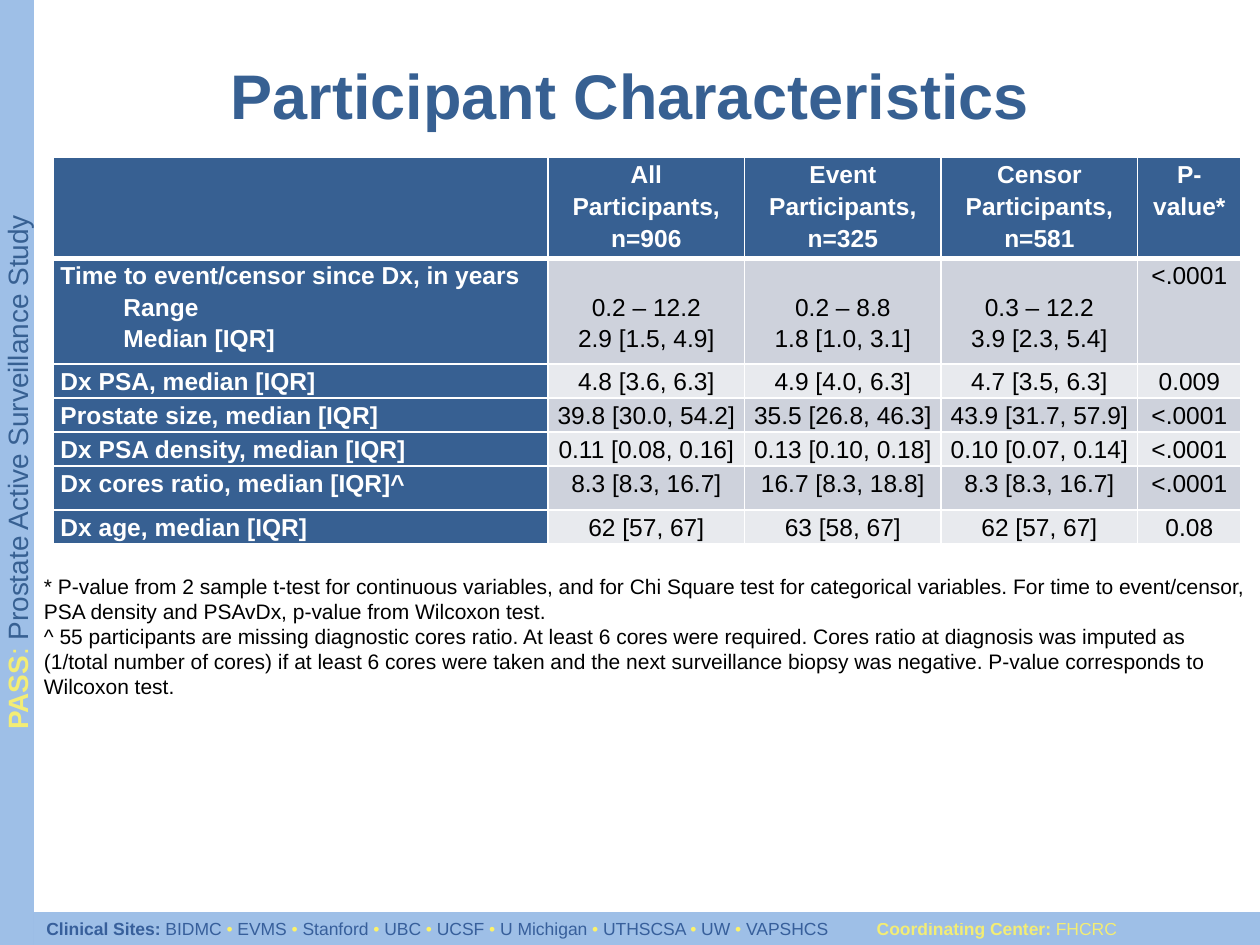
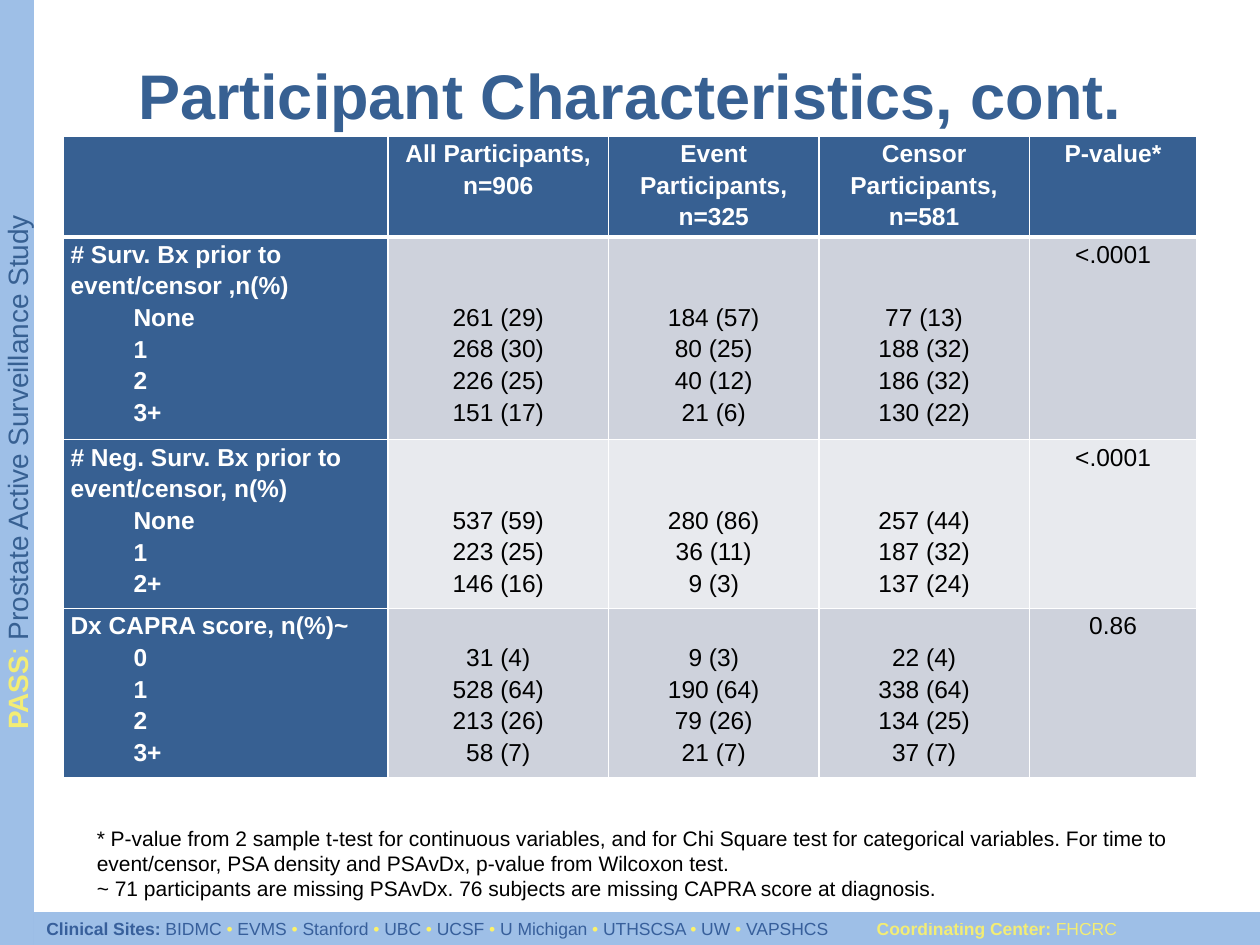
from dataclasses import dataclass

from lxml.etree import SubElement
from pptx import Presentation
from pptx.dml.color import RGBColor
from pptx.enum.shapes import MSO_SHAPE
from pptx.enum.text import MSO_ANCHOR, PP_ALIGN
from pptx.oxml.ns import qn
from pptx.util import Inches, Pt


@dataclass(frozen=True)
class Theme:
    """Colours and type sizes of the deck."""
    font: str = "Arial"
    navy: str = "376092"
    ink: str = "375F9B"
    sky: str = "8EB4E3"
    gold: str = "FDF269"
    white: str = "FFFFFF"
    black: str = "000000"
    odd: str = "CED2DC"
    even: str = "E8EAEE"
    title: int = 36
    side: int = 16
    cell: int = 14
    note: int = 12
    foot: int = 10


T = Theme()
LINE = 0.25
SITES = ["BIDMC", "EVMS", "Stanford", "UBC", "UCSF", "U Michigan", "UTHSCSA", "UW", "VAPSHCS"]
HEAD = ["", "All Participants, n=906", "Event Participants,\nn=325",
        "Censor Participants,\nn=581", "P-value*"]
TEST = ("* P-value from 2 sample t-test for continuous variables, and for Chi Square test for "
        "categorical variables. For time to event/censor, PSA density and PSAvDx, "
        "p-value from Wilcoxon test.")
CORES = ("^ 55 participants are missing diagnostic cores ratio. At least 6 cores were required. "
         "Cores ratio at diagnosis was imputed as (1/total number of cores) if at least 6 cores "
         "were taken and the next surveillance biopsy was negative. "
         "P-value corresponds to Wilcoxon test.")
CAPRA = "~ 71 participants are missing PSAvDx. 76 subjects are missing CAPRA score at diagnosis."

FIRST = [
    (0.84, 1, ["Time to event/censor since Dx, in years\nRange\nMedian [IQR]",
               "0.2 – 12.2\n2.9 [1.5, 4.9]", "0.2 – 8.8\n1.8 [1.0, 3.1]",
               "0.3 – 12.2\n3.9 [2.3, 5.4]", "<.0001"]),
    (0.27, 0, ["Dx PSA, median [IQR]", "4.8 [3.6, 6.3]", "4.9 [4.0, 6.3]",
               "4.7 [3.5, 6.3]", "0.009"]),
    (0.27, 0, ["Prostate size, median [IQR]", "39.8 [30.0, 54.2]", "35.5 [26.8, 46.3]",
               "43.9 [31.7, 57.9]", "<.0001"]),
    (0.27, 0, ["Dx PSA density, median [IQR]", "0.11 [0.08, 0.16]", "0.13 [0.10, 0.18]",
               "0.10 [0.07, 0.14]", "<.0001"]),
    (0.35, 0, ["Dx cores ratio, median [IQR]^", "8.3 [8.3, 16.7]", "16.7 [8.3, 18.8]",
               "8.3 [8.3, 16.7]", "<.0001"]),
    (0.27, 0, ["Dx age, median [IQR]", "62 [57, 67]", "63 [58, 67]", "62 [57, 67]", "0.08"]),
]
SECOND = [
    (1.61, 2, ["# Surv. Bx prior to event/censor ,n(%)\nNone\n1\n2\n3+",
               "261 (29)\n268 (30)\n226 (25)\n151 (17)",
               "184 (57)\n80 (25)\n40 (12)\n21 (6)",
               "77 (13)\n188 (32)\n186 (32)\n130 (22)", "<.0001"]),
    (1.34, 2, ["# Neg. Surv. Bx prior to event/censor, n(%)\nNone\n1\n2+",
               "537 (59)\n223 (25)\n146 (16)", "280 (86)\n36 (11)\n9 (3)",
               "257 (44)\n187 (32)\n137 (24)", "<.0001"]),
    (1.34, 1, ["Dx CAPRA score, n(%)~\n0\n1\n2\n3+",
               "31 (4)\n528 (64)\n213 (26)\n58 (7)", "9 (3)\n190 (64)\n79 (26)\n21 (7)",
               "22 (4)\n338 (64)\n134 (25)\n37 (7)", "0.86"]),
]


def paint(fill, color):
    """Fill with a solid colour."""
    fill.solid()
    fill.fore_color.rgb = RGBColor.from_string(color)


def fade(node, alpha):
    """Set the opacity of the first colour in a node, in percent."""
    color = node.find(".//" + qn("a:srgbClr"))
    SubElement(color, qn("a:alpha"), val=str(alpha * 1000))


def write(frame, text, size, color=T.black, bold=False, align=None, space=None,
          indent=0, tab=None):
    """Write a string of lines, or one line of (text, colour, bold, alpha) runs."""
    lines = text.split("\n") if isinstance(text, str) else [text]
    for i, line in enumerate(lines):
        para = frame.paragraphs[0] if i == 0 else frame.add_paragraph()
        para.alignment = align
        para.line_spacing = space
        props = para._p.get_or_add_pPr()
        if i and indent:
            props.set("marL", str(Inches(indent)))
            props.set("indent", "0")
        if tab:
            stops = SubElement(props, qn("a:tabLst"))
            SubElement(stops, qn("a:tab"), pos=str(Inches(tab)), algn="l")
        parts = [(line, color, bold, 100)] if isinstance(line, str) else line
        for words, tone, heavy, alpha in parts:
            run = para.add_run()
            run.text = words
            run.font.name, run.font.size, run.font.bold = T.font, Pt(size), heavy
            paint(run.font.fill, tone)
            if alpha < 100:
                fade(run._r, alpha)


def band(slide, left, top, width, height):
    """Add a pale blue band and return its text frame."""
    shape = slide.shapes.add_shape(MSO_SHAPE.RECTANGLE, *map(Inches, (left, top, width, height)))
    shape.shadow.inherit = False
    shape.line.fill.background()
    paint(shape.fill, T.sky)
    fade(shape._element.spPr, 85)
    return shape.text_frame


def frame(slide):
    """Add the footer and the side band."""
    runs = [("Clinical Sites:", T.ink, True, 100)]
    for i, site in enumerate(SITES):
        if i:
            runs.append(("•", T.gold, False, 100))
        runs.append((f" {site} " if i < len(SITES) - 1 else f" {site}\t", T.ink, False, 100))
    runs += [("Coordinating Center:", T.gold, True, 90), (" FHCRC", T.gold, False, 90)]
    foot = band(slide, 0.27, 7.24, 9.73, 0.27)
    foot.vertical_anchor = MSO_ANCHOR.TOP
    write(foot, runs, T.foot, align=PP_ALIGN.LEFT, tab=6.59)
    side = band(slide, 0, 0, 0.27, 7.5)
    side.vertical_anchor = MSO_ANCHOR.MIDDLE
    side._txBody.bodyPr.set("vert", "vert270")
    write(side, [("PASS", T.gold, True, 90), (": ", T.gold, False, 90),
                 ("Prostate Active Surveillance Study", T.navy, False, 100)],
          T.side, align=PP_ALIGN.CENTER)


def edge(cell, top, base):
    """Draw white cell borders with the given top and bottom widths."""
    props = cell._tc.get_or_add_tcPr()
    for side, width in (("L", 1), ("R", 1), ("T", top), ("B", base)):
        line = SubElement(props, qn("a:ln" + side), w=str(Pt(width)))
        fill = SubElement(line, qn("a:solidFill"))
        SubElement(fill, qn("a:srgbClr"), val=T.white)


def grid(slide, left, top, cols, rows):
    """Add a table below the shared header row."""
    rows = [(0.8, 0, HEAD)] + rows
    high = sum(row[0] for row in rows)
    table = slide.shapes.add_table(len(rows), len(cols), Inches(left), Inches(top),
                                   Inches(sum(cols)), Inches(high)).table
    for col, width in zip(table.columns, cols):
        col.width = Inches(width)
    for r, (height, skip, texts) in enumerate(rows):
        table.rows[r].height = Inches(height)
        for c, text in enumerate(texts):
            cell = table.cell(r, c)
            dark = r == 0 or c == 0
            cell.margin_left = cell.margin_right = Inches(0.06)
            cell.margin_top = Inches(LINE * skip if 0 < c < 4 else 0)
            cell.margin_bottom = 0
            edge(cell, 3 if r == 1 else 1, 3 if r == 0 else 1)
            paint(cell.fill, T.navy if dark else T.odd if r % 2 else T.even)
            write(cell.text_frame, text, T.cell, color=T.white if dark else T.black,
                  bold=dark, align=PP_ALIGN.CENTER if c else PP_ALIGN.LEFT,
                  space=1.15, indent=0 if c else 0.5)


def note(slide, text, left, top, width, height):
    """Add the notes below a table."""
    box = slide.shapes.add_textbox(*map(Inches, (left, top, width, height))).text_frame
    box.word_wrap = True
    write(box, text, T.note)


def page(deck, text):
    """Add a slide with the shared bands and its title."""
    slide = deck.slides.add_slide(deck.slide_layouts[5])
    frame(slide)
    title = slide.shapes.title
    title.left, title.top, title.width, title.height = map(Inches, (0.75, 0.25, 8.5, 1))
    title.text_frame.vertical_anchor = MSO_ANCHOR.MIDDLE
    write(title.text_frame, text, T.title, color=T.navy, bold=True, align=PP_ALIGN.CENTER)
    return slide


def main():
    """Build and save the deck."""
    deck = Presentation()
    deck.slide_width, deck.slide_height = Inches(10), Inches(7.5)
    slide = page(deck, "Participant Characteristics")
    grid(slide, 0.42, 1.25, [3.93, 1.56, 1.56, 1.56, 0.82], FIRST)
    note(slide, f"{TEST}\n{CORES}", 0.25, 4.5, 9.75, 1.41)
    slide = page(deck, "Participant Characteristics, cont.")
    grid(slide, 0.5, 1.08, [2.58, 1.75, 1.67, 1.67, 1.33], SECOND)
    note(slide, f"{TEST}\n{CAPRA}", 0.67, 6.5, 8.83, 1)
    deck.save("out.pptx")


if __name__ == "__main__":
    main()
